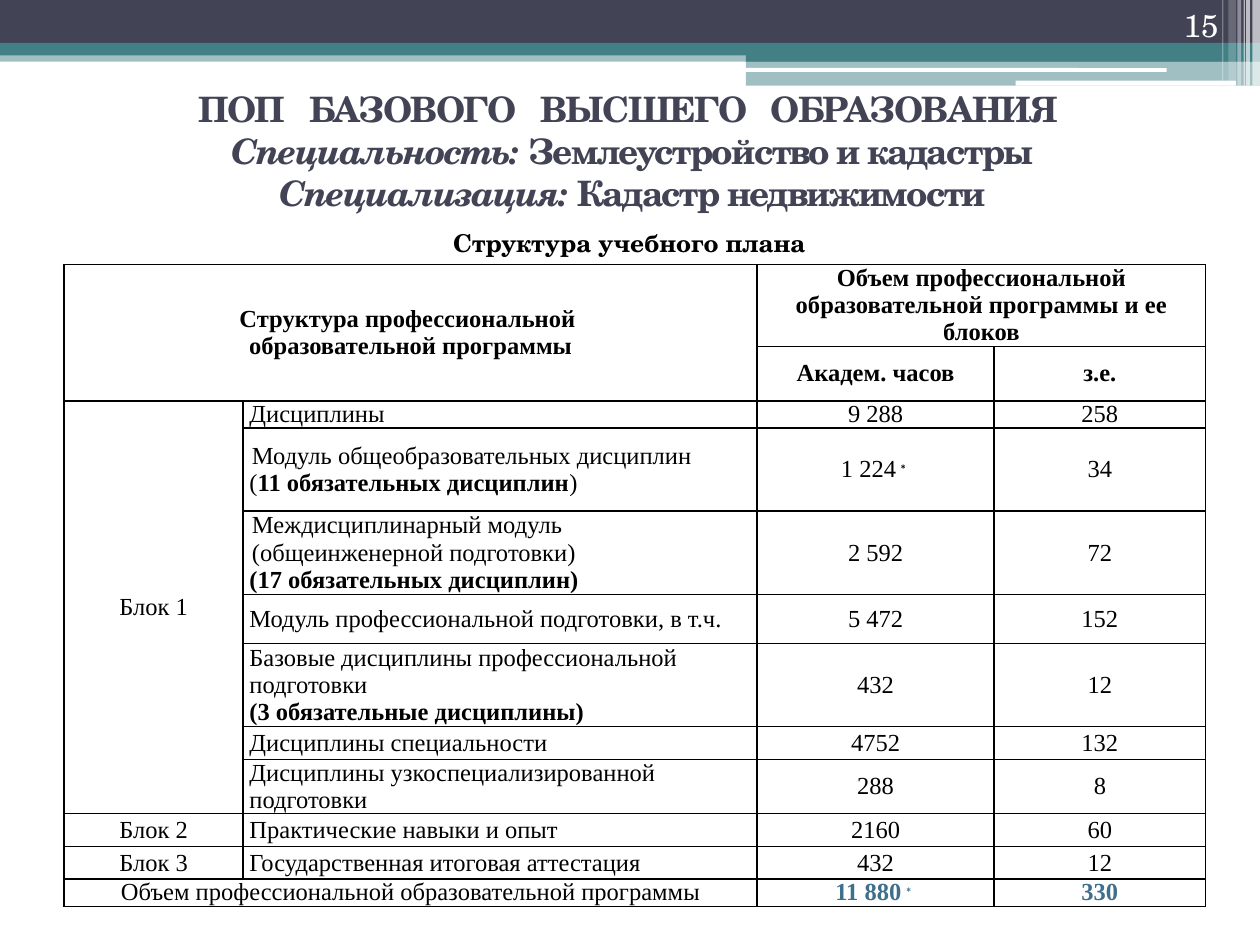
"""Build a slide with the structure of a curriculum for a higher education programme."""
import pptx
import pptx.util
import pptx.dml.color
import pptx.enum.shapes
import pptx.enum.text
import pptx.oxml.ns
from lxml import etree

Inches = pptx.util.Inches
SHAPES = pptx.enum.shapes.MSO_SHAPE
ALIGN = pptx.enum.text.PP_ALIGN
ANCHOR = pptx.enum.text.MSO_ANCHOR
SERIF, TABLE_FONT = "TeX Gyre Schola", "Times New Roman"
INK, TEAL, WHITE, BLACK, BLUE = "424456", "438086", "FFFFFF", "000000", "406F8D"

BANDS = [
    (0, 0.4, 10, 0.09, TEAL, 50),
    (0, 0, 10, 0.34, INK, 100),
    (0, 0.34, 10, 0.1, TEAL, 100),
    (5.92, 0.39, 4.08, 0.1, TEAL, 100),
    (5.92, 0.48, 4.08, 0.2, TEAL, 50),
]
ROUNDED_BARS = [
    (5.91, 0.54, 3.35, 0.03, WHITE, 100),
    (8.06, 0.64, 1.75, 0.04, WHITE, 100),
]
STRIPES = [
    (9.94, 0, 0.06, 0.68, WHITE, 65),
    (9.89, 0, 0.03, 0.68, WHITE, 65),
    (9.87, 0, 0.01, 0.68, WHITE, 60),
    (9.82, 0, 0.03, 0.68, WHITE, 40),
    (9.75, 0, 0.06, 0.64, WHITE, 20),
    (9.7, 0, 0.01, 0.64, WHITE, 30),
]

BOLD, ITALIC, PLAIN = {"bold": True}, {"italic": True}, {}
RAISED = {"baseline": 30}
TOTAL = {"bold": True, "color": BLUE}
WIDE_GAP = (" ", {"spacing": 7.8})
TITLE = [
    [("ПОП", PLAIN), WIDE_GAP, ("БАЗОВОГО", PLAIN), WIDE_GAP, ("ВЫСШЕГО", PLAIN), WIDE_GAP,
     ("ОБРАЗОВАНИЯ ", PLAIN), ("\n", PLAIN),
     ("Специальность: ", ITALIC), ("Землеустройство и кадастры", PLAIN)],
    [("Специализация: ", ITALIC), ("Кадастр недвижимости", PLAIN)],
]

COLUMNS = [1.42, 4.08, 1.88, 1.68]
ROWS = [0.65, 0.43, 0.21, 0.66, 0.66, 0.39, 0.66, 0.26, 0.43, 0.26, 0.26, 0.21]
MERGES = [((0, 0), (1, 1)), ((0, 2), (0, 3)), ((2, 0), (8, 0)), ((11, 0), (11, 1))]
INDENTED = [(3, 1), (4, 1)]
CELLS = [
    [[[("Структура профессиональной ", BOLD)], [("образовательной программы", BOLD)]], None,
     [[("Объем профессиональной образовательной программы и ее блоков", BOLD)]], None],
    [None, None, [[("Академ. часов", BOLD)]], [[("з.е.", BOLD)]]],
    ["Блок 1", "Дисциплины", "9 288", "258"],
    [None, [[("Модуль общеобразовательных дисциплин", PLAIN)],
            [("(", PLAIN), ("11 обязательных дисциплин", BOLD), (")", PLAIN)]],
     [[("1 224", PLAIN), ("∗", RAISED)]], "34"],
    [None, [[("Междисциплинарный модуль (общеинженерной подготовки)", PLAIN)],
            [("(17 обязательных дисциплин)", BOLD)]], "2 592", "72"],
    [None, "Модуль профессиональной подготовки, в т.ч.", "5 472", "152"],
    [None, [[("Базовые дисциплины профессиональной подготовки", PLAIN)],
            [("(3 обязательные дисциплины)", BOLD)]], "432", "12"],
    [None, "Дисциплины специальности", "4752", "132"],
    [None, "Дисциплины узкоспециализированной подготовки", "288", "8"],
    ["Блок 2", "Практические навыки и опыт", "2160", "60"],
    ["Блок 3", "Государственная итоговая аттестация", "432", "12"],
    ["Объем профессиональной образовательной программы", None,
     [[("11 880", TOTAL), ("∗", {**TOTAL, **RAISED})]], [[("330", TOTAL)]]],
]


def paint(target, color):
    """Set a solid colour on a fill."""
    target.solid()
    target.fore_color.rgb = pptx.dml.color.RGBColor.from_string(color)


def write(frame, content, size=14, font=TABLE_FONT, color=BLACK, bold=False,
          spacing=0, align=ALIGN.CENTER, space_after=0, line_height=None):
    """Write a string, or paragraphs of (text, format) spans, into a text frame."""
    paragraphs = [[(content, PLAIN)]] if isinstance(content, str) else content
    frame.word_wrap = True
    for index, spans in enumerate(paragraphs):
        para = frame.add_paragraph() if index else frame.paragraphs[0]
        para.alignment = align
        if line_height:
            para.line_spacing = pptx.util.Pt(line_height)
        if space_after:
            para.space_after = pptx.util.Pt(space_after)
        for text, style in spans:
            if text == "\n":
                para.add_line_break()
                continue
            span = para.add_run()
            span.text = text
            span.font.size = pptx.util.Pt(size)
            span.font.name = font
            span.font.bold = style.get("bold", bold)
            span.font.italic = style.get("italic", False)
            paint(span.font.fill, style.get("color", color))
            properties = span.font._element
            gap = style.get("spacing", spacing)
            if gap:
                properties.set("spc", str(round(gap * 100)))
            if "baseline" in style:
                properties.set("baseline", str(style["baseline"] * 1000))


def add_bar(page, kind, left, top, width, height, color, opacity):
    """Add a borderless bar with the given opacity in percent."""
    bar = page.shapes.add_shape(kind, *map(Inches, (left, top, width, height)))
    bar.shadow.inherit = False
    bar.line.fill.background()
    paint(bar.fill, color)
    if opacity < 100:
        tint = bar._element.spPr.find(".//" + pptx.oxml.ns.qn("a:srgbClr"))
        etree.SubElement(tint, pptx.oxml.ns.qn("a:alpha"), val=str(opacity * 1000))


def add_text(page, bounds, content, anchor=ANCHOR.TOP, **style):
    """Add a wrapped text box."""
    box = page.shapes.add_textbox(*map(Inches, bounds))
    box.text_frame.vertical_anchor = anchor
    write(box.text_frame, content, font=SERIF, **style)


def add_borders(cell):
    """Draw a one-point black line on each side of a cell."""
    properties = cell._tc.get_or_add_tcPr()
    for side in ("lnL", "lnR", "lnT", "lnB"):
        line = etree.SubElement(properties, pptx.oxml.ns.qn("a:" + side), w="12700")
        solid = etree.SubElement(line, pptx.oxml.ns.qn("a:solidFill"))
        etree.SubElement(solid, pptx.oxml.ns.qn("a:srgbClr"), val=BLACK)


def add_curriculum(page):
    """Add the curriculum table."""
    table = page.shapes.add_table(len(ROWS), len(COLUMNS), Inches(0.51), Inches(2.1),
                                  Inches(sum(COLUMNS)), Inches(sum(ROWS))).table
    table.first_row = table.horz_banding = False
    for column, width in zip(table.columns, COLUMNS):
        column.width = Inches(width)
    for row, height in zip(table.rows, ROWS):
        row.height = Inches(height)
    for start, end in MERGES:
        table.cell(*start).merge(table.cell(*end))
    for row, contents in enumerate(CELLS):
        for column, content in enumerate(contents):
            cell = table.cell(row, column)
            add_borders(cell)
            cell.fill.background()
            cell.vertical_anchor = ANCHOR.MIDDLE
            cell.margin_left = cell.margin_right = Inches(0.05)
            cell.margin_top = cell.margin_bottom = 0
            left = column == 1 and row > 1
            write(cell.text_frame, content or [[]], line_height=15.5,
                  align=ALIGN.LEFT if left else ALIGN.CENTER)
            if (row, column) in INDENTED:
                first = cell.text_frame.paragraphs[0]._p.get_or_add_pPr()
                first.set("marL", str(Inches(0.02)))


def main():
    """Assemble and save the slide."""
    deck = pptx.Presentation()
    deck.slide_width, deck.slide_height = Inches(10), Inches(7.5)
    page = deck.slides.add_slide(deck.slide_layouts[6])
    for kind, bars in ((SHAPES.RECTANGLE, BANDS), (SHAPES.ROUNDED_RECTANGLE, ROUNDED_BARS),
                       (SHAPES.RECTANGLE, STRIPES)):
        for bar in bars:
            add_bar(page, kind, *bar)
    add_text(page, (8.94, 0, 0.83, 0.4), "15", anchor=ANCHOR.BOTTOM,
             size=18, color=WHITE, align=ALIGN.RIGHT)
    add_text(page, (0.16, 0.29, 9.72, 1.81), TITLE, anchor=ANCHOR.MIDDLE,
             size=20, color=INK, bold=True, spacing=-1)
    add_curriculum(page)
    add_text(page, (0.43, 1.76, 9.13, 0.34), "Структура учебного плана",
             bold=True, space_after=12)
    deck.save("out.pptx")


if __name__ == "__main__":
    main()
